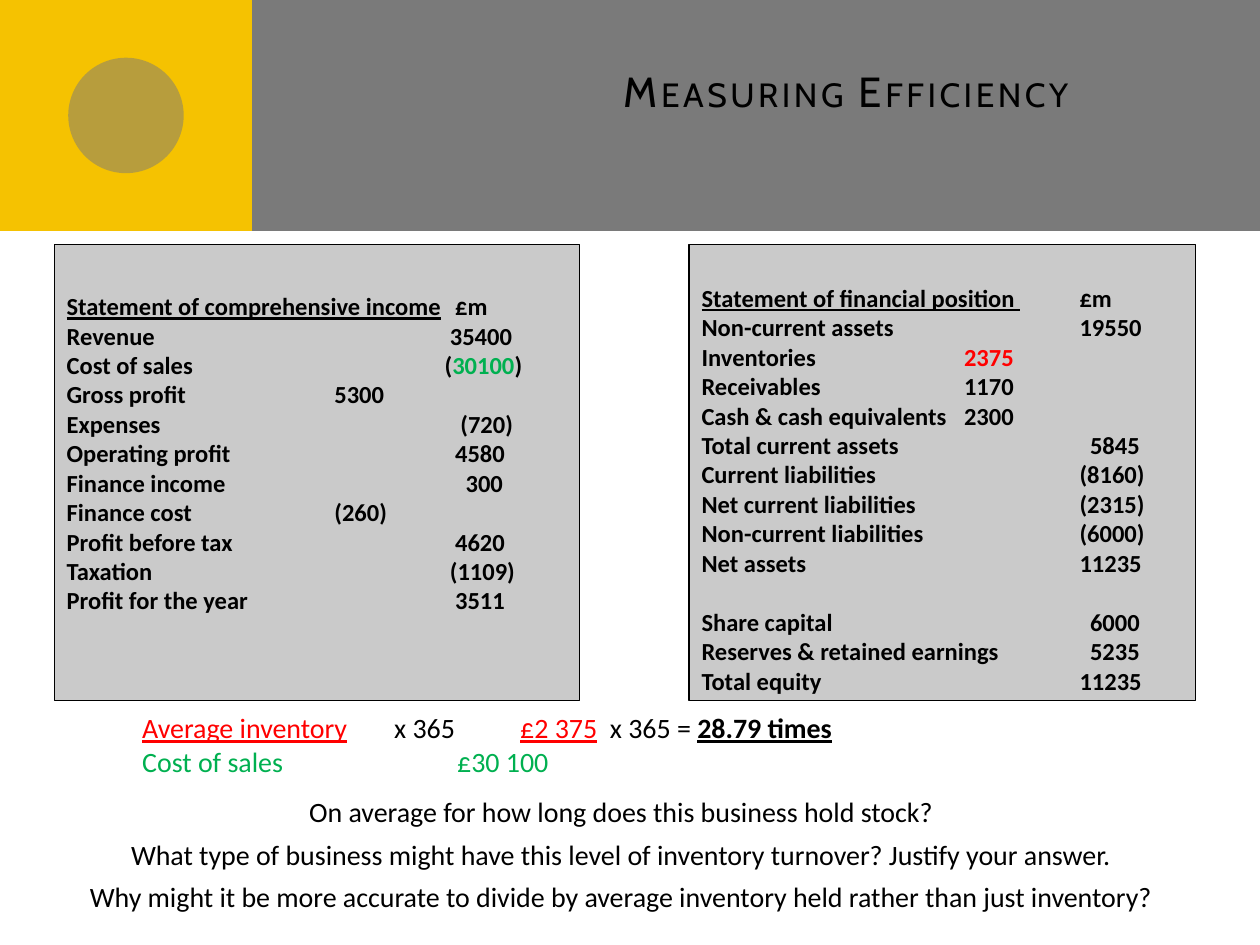
from lxml import etree
from pptx import Presentation
from pptx.dml.color import RGBColor
from pptx.enum import shapes, text
from pptx.oxml.ns import qn
from pptx.util import Pt

BLACK = RGBColor(0, 0, 0)
GREY = RGBColor(0x7A, 0x7A, 0x7A)
PALE = RGBColor(0xCA, 0xCA, 0xCA)
YELLOW = RGBColor(0xF5, 0xC2, 0x01)
RED = RGBColor(0xFF, 0, 0)
GREEN = RGBColor(0, 0xB0, 0x50)

TITLE = "Measuring Efficiency"

# Statement rows: label, value runs (text, colour), value position, space before
POSITION = [
    ("Statement of financial position ", [("£m", BLACK)], 216, 0),
    ("Non-current assets", [("19550", BLACK)], 216, 0),
    ("Inventories", [("2375", RED)], 150, 0),
    ("Receivables", [("1170", BLACK)], 150, 0),
    ("Cash & cash equivalents", [("2300", BLACK)], 150, 0),
    ("Total current assets", [("5845", BLACK)], 222, 0),
    ("Current liabilities", [("(8160)", BLACK)], 216, 0),
    ("Net current liabilities", [("(2315)", BLACK)], 216, 0),
    ("Non-current liabilities", [("(6000)", BLACK)], 216, 0),
    ("Net assets", [("11235", BLACK)], 216, 0),
    ("Share capital", [("6000", BLACK)], 222, 17),
    ("Reserves & retained earnings", [("5235", BLACK)], 222, 0),
    ("Total equity", [("11235", BLACK)], 216, 0),
]
INCOME = [
    ("Statement of comprehensive income", [("£m", BLACK)], 222, 0),
    ("Revenue", [("35400", BLACK)], 219, 0),
    ("Cost of sales", [("(", BLACK), ("30100", GREEN), (")", BLACK)], 216, 0),
    ("Gross profit", [("5300", BLACK)], 153, 0),
    ("Expenses", [("(720)", BLACK)], 225, 0),
    ("Operating profit", [("4580", BLACK)], 222, 0),
    ("Finance income", [("300", BLACK)], 228, 0),
    ("Finance cost", [("(260)", BLACK)], 153, 0),
    ("Profit before tax", [("4620", BLACK)], 222, 0),
    ("Taxation", [("(1109)", BLACK)], 219, 0),
    ("Profit for the year", [("3511", BLACK)], 222, 0),
]
# Panels: left, width, top inset, rows
PANELS = [(393.8, 289.4, 22, POSITION), (31, 300.2, 26.7, INCOME)]

# Formula runs: text, colour, bold, underline
FORMULA = [
    [("Average inventory", RED, False, True),
     ("\tx 365\t\t", BLACK, False, False),
     ("£2 375", RED, False, True),
     ("  x 365 = ", BLACK, False, False),
     ("28.79 times", BLACK, True, True)],
    [("Cost of sales\t\t\t£30 100", GREEN, False, False)],
]
# Questions: text, space before
QUESTIONS = [
    ("On average for how long does this business hold stock?", 9.8),
    ("What type of business might have this level of inventory turnover? "
     "Justify your answer.", 4.9),
    ("Why might it be more accurate to divide by average inventory held "
     "rather than just inventory?", 4.9),
]

prs = Presentation()
prs.slide_width, prs.slide_height = Pt(720), Pt(540)
s = prs.slides.add_slide(prs.slide_layouts[6])


def add_block(kind, left, top, width, height, fill):
    sp = s.shapes.add_shape(kind, Pt(left), Pt(top), Pt(width), Pt(height))
    sp.shadow.inherit = False
    sp.fill.solid()
    sp.fill.fore_color.rgb = fill
    sp.line.fill.background()
    return sp


def add_run(p, words, size, color=BLACK, bold=False, underline=False, font="Calibri"):
    r = p.add_run()
    r.text = words
    r.font.name, r.font.size = font, Pt(size)
    r.font.bold, r.font.underline = bold, underline
    r.font.color.rgb = color
    return r


def next_paragraph(tf, i):
    return tf.paragraphs[0] if i == 0 else tf.add_paragraph()


def set_tab(p, position):
    tabs = etree.SubElement(p._p.get_or_add_pPr(), qn("a:tabLst"))
    etree.SubElement(tabs, qn("a:tab"), pos=str(Pt(position)), algn="l")


# Header band with circle
RECT, OVAL = shapes.MSO_SHAPE.RECTANGLE, shapes.MSO_SHAPE.OVAL
add_block(RECT, 0, 0, 720, 132, GREY)
add_block(RECT, 0, 0, 144, 132, YELLOW)
circle = add_block(OVAL, 39, 33, 66, 66, GREY)
color = circle._element.spPr.find(qn("a:solidFill"))[0]
etree.SubElement(color, qn("a:alpha"), val="50000")

# Statement panels
for left, width, inset, rows in PANELS:
    sp = add_block(RECT, left, 139.7, width, 260.6, PALE)
    sp.line.color.rgb, sp.line.width = BLACK, Pt(0.75)
    tf = sp.text_frame
    tf.word_wrap = True
    tf.vertical_anchor = text.MSO_ANCHOR.TOP
    tf.margin_top, tf.margin_bottom = Pt(inset), Pt(0)
    for i, (label, values, position, before) in enumerate(rows):
        p = next_paragraph(tf, i)
        p.alignment = text.PP_ALIGN.LEFT
        p.space_before = Pt(before)
        set_tab(p, position)
        add_run(p, label, 14, bold=True, underline=i == 0)
        add_run(p, "\t", 14, bold=True)
        for value, color in values:
            add_run(p, value, 14, color, bold=True)

# Formula and questions
tf = s.shapes.add_textbox(Pt(2.2), Pt(402.5), Pt(705.6), Pt(143.3)).text_frame
tf.word_wrap = True
for i, runs in enumerate(FORMULA):
    p = next_paragraph(tf, i)
    p._p.get_or_add_pPr().set("marL", str(Pt(72)))
    for words, color, bold, underline in runs:
        add_run(p, words, 16, color, bold, underline)
for question, before in QUESTIONS:
    p = tf.add_paragraph()
    p.alignment = text.PP_ALIGN.CENTER
    p.space_before = Pt(before)
    add_run(p, question, 16)

# Title
tf = s.shapes.add_textbox(Pt(167), Pt(21.6), Pt(491), Pt(90)).text_frame
tf.word_wrap = True
tf.vertical_anchor = text.MSO_ANCHOR.MIDDLE
tf.margin_bottom = Pt(33)
p = tf.paragraphs[0]
p.alignment = text.PP_ALIGN.RIGHT
r = add_run(p, TITLE, 24, font="Cabin")
r.font._element.set("cap", "small")
r.font._element.set("spc", "200")

prs.save("out.pptx")
